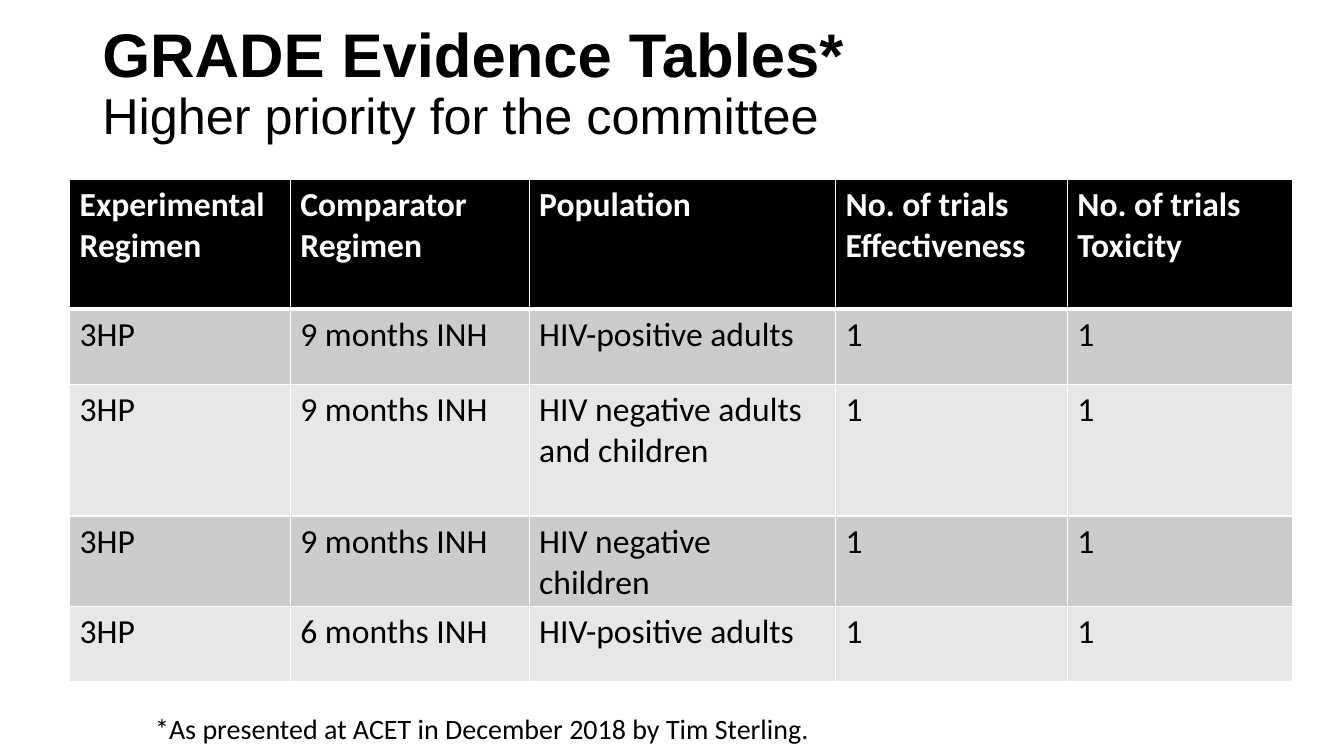
from dataclasses import dataclass

from lxml import etree
from pptx import Presentation
from pptx import util as u
from pptx.dml.color import RGBColor
from pptx.enum import text
from pptx.oxml import ns

BLACK, WHITE = "000000", "FFFFFF"
BANDS = ("CCCCCC", "E7E7E7")


@dataclass
class TextBox:
    left: float
    top: float
    width: float
    height: float
    wrap: bool
    anchor: text.MSO_ANCHOR


@dataclass
class RowStyle:
    fill: str
    color: str
    bold: bool
    top_line: float
    bottom_line: float


TITLE = TextBox(66, 18.72, 828, 84.24, True, text.MSO_ANCHOR.MIDDLE)
FOOTNOTE = TextBox(103.68, 504.72, 486.72, 53.28, False, text.MSO_ANCHOR.TOP)

TABLE_LEFT, TABLE_TOP = 49.68, 128.16
COLUMN_WIDTHS = (157.68, 170.64, 218.88, 165.6, 160.56)
ROW_HEIGHTS = (92.7, 53.6, 94.2, 53.6, 53.6)
HEADINGS = ("Experimental Regimen", "Comparator Regimen", "Population",
            "No. of trials\nEffectiveness", "No. of trials\nToxicity")
COMPARISONS = (
    ("3HP", "9 months INH", "HIV-positive adults", "1", "1"),
    ("3HP", "9 months INH", "HIV negative adults and children", "1", "1"),
    ("3HP", "9 months INH", "HIV negative children", "1", "1"),
    ("3HP", "6 months INH", "HIV-positive adults", "1", "1"),
)


def rgb(color: str) -> RGBColor:
    return RGBColor.from_string(color)


def set_font(font, name: str, size: float, color: str, bold: bool = False) -> None:
    font.name, font.size, font.bold = name, u.Pt(size), bold
    font.color.rgb = rgb(color)


def add_text_box(page, box: TextBox):
    """Add a text box and return its first paragraph."""
    frame = page.shapes.add_textbox(u.Pt(box.left), u.Pt(box.top),
                                    u.Pt(box.width), u.Pt(box.height)).text_frame
    frame.word_wrap = box.wrap
    frame.vertical_anchor = box.anchor
    return frame.paragraphs[0]


def set_borders(cell, style: RowStyle) -> None:
    """Draw white cell borders; they precede the fill in the cell properties."""
    properties = cell._tc.get_or_add_tcPr()
    widths = {"lnL": 1, "lnR": 1, "lnT": style.top_line, "lnB": style.bottom_line}
    for position, (tag, width) in enumerate(widths.items()):
        line = etree.Element(ns.qn(f"a:{tag}"), w=str(int(u.Pt(width))))
        fill = etree.SubElement(line, ns.qn("a:solidFill"))
        etree.SubElement(fill, ns.qn("a:srgbClr"), val=WHITE)
        properties.insert(position, line)


def row_style(index: int) -> RowStyle:
    if index == 0:
        return RowStyle(BLACK, WHITE, True, 1, 3)
    return RowStyle(BANDS[(index - 1) % 2], BLACK, False, 3 if index == 1 else 1, 1)


def fill_cell(cell, words: str, style: RowStyle) -> None:
    cell.text = words
    cell.fill.solid()
    cell.fill.fore_color.rgb = rgb(style.fill)
    set_borders(cell, style)
    for para in cell.text_frame.paragraphs:
        set_font(para.font, "Calibri", 24, style.color, style.bold)


def add_title(page) -> None:
    para = add_text_box(page, TITLE)
    para.line_spacing = 0.9
    span = para.add_run()
    span.text = "GRADE Evidence Tables*"
    set_font(span.font, "Arial", 44, BLACK, True)
    para.add_line_break()
    span = para.add_run()
    span.text = "Higher priority for the committee"
    set_font(span.font, "Arial", 36, BLACK)


def add_evidence_table(page) -> None:
    rows = (HEADINGS, *COMPARISONS)
    table = page.shapes.add_table(
        len(rows), len(HEADINGS), u.Pt(TABLE_LEFT), u.Pt(TABLE_TOP),
        u.Pt(sum(COLUMN_WIDTHS)), u.Pt(sum(ROW_HEIGHTS))).table
    table.horz_banding = False
    for column, width in zip(table.columns, COLUMN_WIDTHS):
        column.width = u.Pt(width)
    for index, (row, height, entries) in enumerate(zip(table.rows, ROW_HEIGHTS, rows)):
        row.height = u.Pt(height)
        for cell, words in zip(row.cells, entries):
            fill_cell(cell, words, row_style(index))


def add_footnote(page) -> None:
    para = add_text_box(page, FOOTNOTE)
    para.text = "*As presented at ACET in December 2018 by Tim Sterling."
    set_font(para.font, "Calibri", 20, BLACK)


def main() -> None:
    deck = Presentation()
    deck.slide_width, deck.slide_height = u.Pt(960), u.Pt(540)
    page = deck.slides.add_slide(deck.slide_layouts[6])
    add_title(page)
    add_evidence_table(page)
    add_footnote(page)
    deck.save("out.pptx")


if __name__ == "__main__":
    main()
